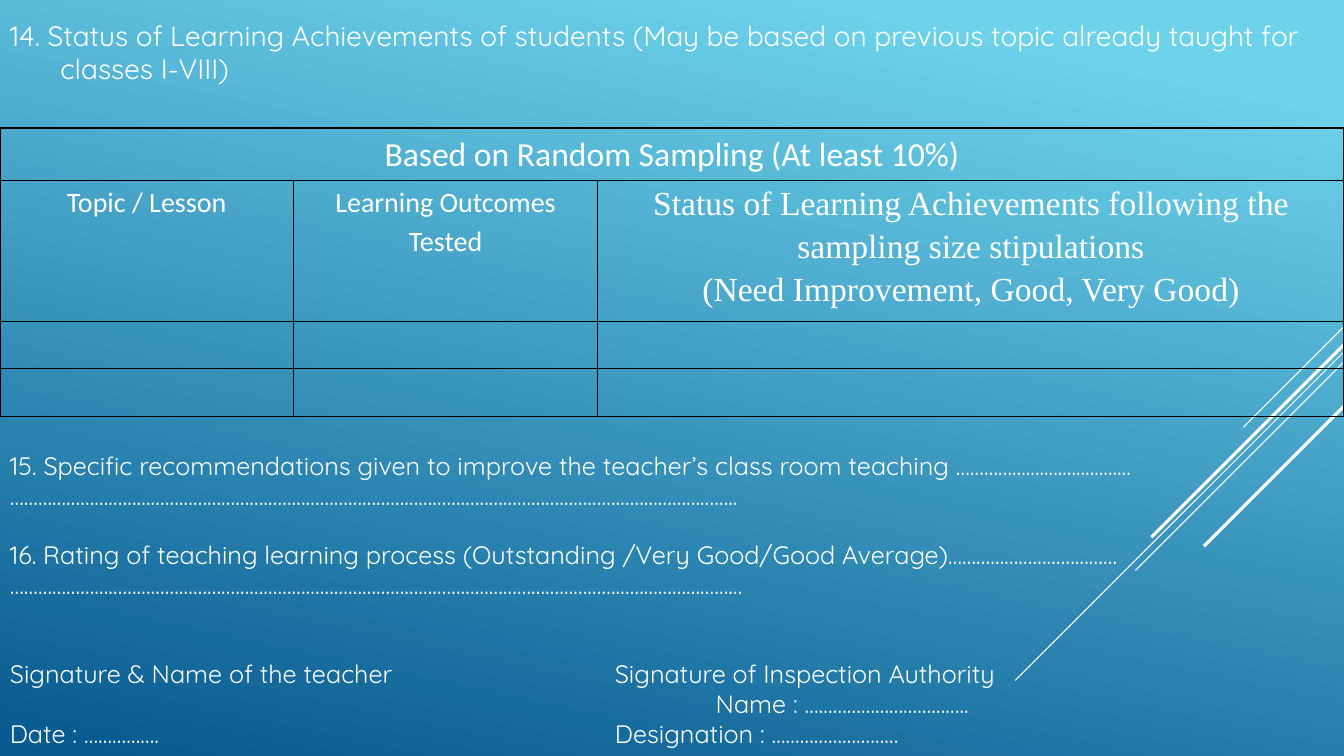
from lxml.etree import SubElement
from pptx import Presentation
from pptx.dml.color import RGBColor
from pptx.enum.shapes import MSO_CONNECTOR
from pptx.enum.text import PP_ALIGN
from pptx.oxml import parse_xml
from pptx.oxml.ns import nsdecls, qn
from pptx.util import Inches, Pt

WHITE = RGBColor(0xFF, 0xFF, 0xFF)
SKY = RGBColor(0x6E, 0xD2, 0xEB)
DEEP_BLUE = RGBColor(0x06, 0x58, 0x8E)
BLACK = RGBColor(0, 0, 0)

SLIDE_WIDTH, SLIDE_HEIGHT = 13.33, 7.5
BODY_FONT = "Quicksand"

# Height on the right edge, length along each axis, weight in points
DIAGONALS = [
    (3.24, 1.0, 0.75),
    (3.49, 3.26, 0.75),
    (3.59, 2.07, 0.75),
    (3.42, 1.91, 2.25),
    (4.03, 1.39, 2.25),
]

HEADING = ("14. Status of Learning Achievements of students "
           "(May be based on previous topic already taught for classes I-VIII)")

COLUMN_WIDTHS = [2.91, 3.02, 7.4]
ROW_HEIGHTS = [0.52, 1.4, 0.47, 0.47]
# Row, column, paragraphs, font, size
TABLE_TEXTS = [
    (0, 0, ["Based on Random Sampling (At least 10%)"], "Calibri", 24),
    (1, 0, ["Topic / Lesson"], "Calibri", 20),
    (1, 1, ["Learning Outcomes Tested"], "Calibri", 20),
    (1, 2, ["Status of Learning Achievements following the sampling size stipulations",
            "(Need Improvement, Good, Very Good)"], "Times New Roman", 24),
]

# Text, space before in points, tab stop in inches
FORM_LINES = [
    ("15. Specific recommendations given to improve the teacher’s class room teaching "
     "…………..........................", 0, None),
    ("…" * 51 + "..", 0, None),
    ("16. Rating of teaching learning process (Outstanding /Very Good/Good Average)"
     + "…" * 12, 20, None),
    ("…" * 52, 0, None),
    ("Signature & Name of the teacher\tSignature of Inspection Authority", 42, 6),
    ("\tName : ……………………………..", 0, 7),
    ("Date : …………….\tDesignation : ………………………", 0, 6),
]


def add_span(para, text, font, size):
    span = para.add_run()
    span.text = text
    span.font.name = font
    span.font.size = Pt(size)
    span.font.color.rgb = WHITE


def paint_background(page):
    fill = page.background.fill
    fill.gradient()
    fill.gradient_angle = 258
    for stop, color, position in zip(fill.gradient_stops, (SKY, DEEP_BLUE), (0.1, 1)):
        stop.color.rgb = color
        stop.position = position


def add_diagonals(page, right):
    for top, reach, weight in DIAGONALS:
        line = page.shapes.add_connector(
            MSO_CONNECTOR.STRAIGHT, Inches(right), Inches(top),
            Inches(right - reach), Inches(top + reach))
        line.line.color.rgb = WHITE
        line.line.width = Pt(weight)
        SubElement(line._element.spPr, qn("a:effectLst"))


def add_text_frame(page, left, top, width, height):
    box = page.shapes.add_textbox(Inches(left), Inches(top), Inches(width), Inches(height))
    box.text_frame.word_wrap = True
    return box.text_frame


def add_heading(page, left, top, width, height):
    para = add_text_frame(page, left, top, width, height).paragraphs[0]
    properties = para._p.get_or_add_pPr()
    properties.set("marL", str(Inches(0.5)))
    properties.set("indent", str(-Inches(0.5)))
    add_span(para, HEADING, BODY_FONT, 20)


def style_cell(cell):
    """Clear the fill, set the margins and draw black borders."""
    cell.fill.background()
    cell.margin_left = cell.margin_right = Inches(0.07)
    cell.margin_top = cell.margin_bottom = 0
    properties = cell._tc.get_or_add_tcPr()
    for index, side in enumerate(("lnL", "lnR", "lnT", "lnB")):
        properties.insert(index, parse_xml(
            f'<a:{side} {nsdecls("a")} w="{Pt(1)}"><a:solidFill>'
            f'<a:srgbClr val="{BLACK}"/></a:solidFill></a:{side}>'))


def add_sampling_table(page, left, top):
    frame = page.shapes.add_table(
        len(ROW_HEIGHTS), len(COLUMN_WIDTHS), Inches(left), Inches(top),
        Inches(sum(COLUMN_WIDTHS)), Inches(sum(ROW_HEIGHTS)))
    table = frame.table
    table.first_row = table.horz_banding = False
    for column, width in zip(table.columns, COLUMN_WIDTHS):
        column.width = Inches(width)
    for row, height in zip(table.rows, ROW_HEIGHTS):
        row.height = Inches(height)
    for cell in table.iter_cells():
        style_cell(cell)
    table.cell(0, 0).merge(table.cell(0, 2))
    for row, column, lines, font, size in TABLE_TEXTS:
        text_frame = table.cell(row, column).text_frame
        for index, text in enumerate(lines):
            para = text_frame.add_paragraph() if index else text_frame.paragraphs[0]
            para.alignment = PP_ALIGN.CENTER
            para.line_spacing = 1.15
            add_span(para, text, font, size)


def add_form_lines(page, left, top, width, height):
    text_frame = add_text_frame(page, left, top, width, height)
    for index, (text, space, tab_stop) in enumerate(FORM_LINES):
        para = text_frame.add_paragraph() if index else text_frame.paragraphs[0]
        para.space_before = Pt(space)
        if tab_stop:
            tabs = SubElement(para._p.get_or_add_pPr(), qn("a:tabLst"))
            SubElement(tabs, qn("a:tab"), pos=str(Inches(tab_stop)), algn="l")
        add_span(para, text, BODY_FONT, 18)


def main():
    deck = Presentation()
    deck.slide_width = Inches(SLIDE_WIDTH)
    deck.slide_height = Inches(SLIDE_HEIGHT)
    page = deck.slides.add_slide(deck.slide_layouts[6])
    paint_background(page)
    add_diagonals(page, SLIDE_WIDTH)
    add_heading(page, 0, 0.13, SLIDE_WIDTH, 0.88)
    add_sampling_table(page, 0, 1.27)
    add_form_lines(page, 0, 4.42, SLIDE_WIDTH, 3.13)
    deck.save("out.pptx")


if __name__ == "__main__":
    main()
